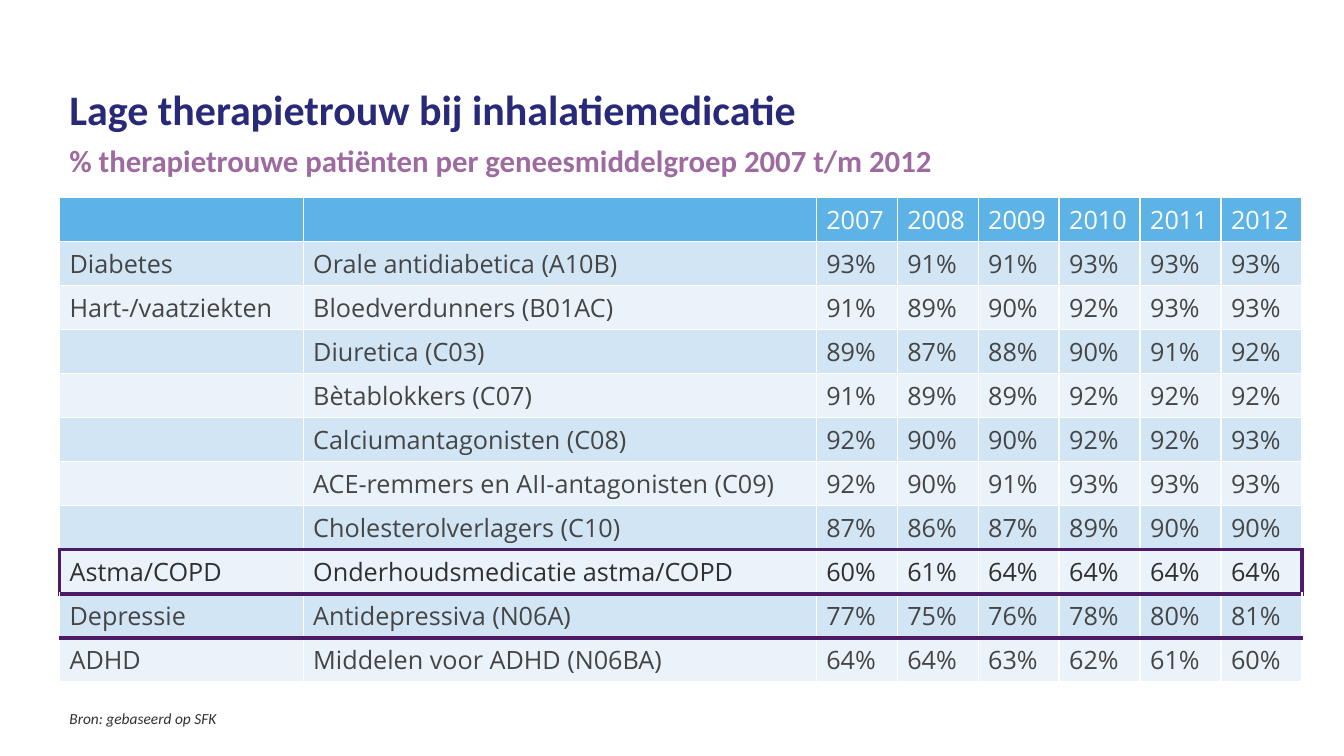
from lxml import etree
from pptx import Presentation
from pptx import util as u
from pptx.dml.color import RGBColor
from pptx.oxml.ns import qn

COLORS = {
    "title": "282979", "subtitle": "9E6BA0", "dark": "303030", "body": "454545",
    "header": "5DB3E5", "odd": "D2E5F5", "even": "EAF2FA",
    "white": "FFFFFF", "highlight": "4D1A67",
}
YEARS = [str(year) for year in range(2007, 2013)]
ADHERENCE = [
    ("Diabetes", "Orale antidiabetica (A10B)", (93, 91, 91, 93, 93, 93)),
    ("Hart-/vaatziekten", "Bloedverdunners (B01AC)", (91, 89, 90, 92, 93, 93)),
    ("", "Diuretica (C03)", (89, 87, 88, 90, 91, 92)),
    ("", "Bètablokkers (C07)", (91, 89, 89, 92, 92, 92)),
    ("", "Calciumantagonisten (C08)", (92, 90, 90, 92, 92, 93)),
    ("", "ACE-remmers en AII-antagonisten (C09)", (92, 90, 91, 93, 93, 93)),
    ("", "Cholesterolverlagers (C10)", (87, 86, 87, 89, 90, 90)),
    ("Astma/COPD", "Onderhoudsmedicatie astma/COPD", (60, 61, 64, 64, 64, 64)),
    ("Depressie", "Antidepressiva (N06A)", (77, 75, 76, 78, 80, 81)),
    ("ADHD", "Middelen voor ADHD (N06BA)", (64, 64, 63, 62, 61, 60)),
]
ASTHMA_ROW = 8
COLUMN_WIDTHS = [6.14, 12.93] + [2.04] * len(YEARS)


class SlideBuilder:
    heading_font = "Calibri"
    table_font = "Open Sans"

    def __init__(self, slide):
        self.slide = slide

    def style(self, paragraph, font_name, size, color, bold=False, italic=False):
        font = paragraph.font
        font.name, font.size = font_name, u.Pt(size)
        font.bold, font.italic = bold, italic
        font.color.rgb = RGBColor.from_string(COLORS[color])

    def text(self, left, top, width, height, lines, spacing=1.0):
        """Add a text box; each line is (wording, size, color, bold, italic)."""
        frame = self.slide.shapes.add_textbox(
            u.Cm(left), u.Cm(top), u.Cm(width), u.Cm(height)).text_frame
        frame.word_wrap = True
        for index, (wording, *look) in enumerate(lines):
            paragraph = frame.add_paragraph() if index else frame.paragraphs[0]
            paragraph.text = wording
            paragraph.line_spacing = spacing
            paragraph.space_after = u.Pt(6)
            self.style(paragraph, self.heading_font, *look)

    def border(self, cell, side, color, points):
        line = etree.SubElement(cell._tc.get_or_add_tcPr(), qn(f"a:ln{side}"),
                                w=str(u.Pt(points)))
        fill = etree.SubElement(line, qn("a:solidFill"))
        etree.SubElement(fill, qn("a:srgbClr"), val=COLORS[color])

    def cell(self, cell, wording, text_color, fill, strong_sides):
        for side in "LRTB":
            strong = side in strong_sides
            self.border(cell, side, "highlight" if strong else "white",
                        3 if strong else 1)
        cell.fill.solid()
        cell.fill.fore_color.rgb = RGBColor.from_string(COLORS[fill])
        paragraph = cell.text_frame.paragraphs[0]
        paragraph.text = wording
        self.style(paragraph, self.table_font, 18, text_color)

    def table(self, left, top, widths, row_height, rows, highlighted):
        """Add a banded table with a heavy frame around the highlighted row."""
        table = self.slide.shapes.add_table(
            len(rows), len(widths), u.Cm(left), u.Cm(top),
            u.Cm(sum(widths)), u.Cm(row_height * len(rows))).table
        for column, width in zip(table.columns, widths):
            column.width = u.Cm(width)
        strong_rows = {highlighted - 1: "B", highlighted: "TB",
                       highlighted + 1: "TB", highlighted + 2: "T"}
        strong_ends = {0: "L", len(widths) - 1: "R"}
        for r, row in enumerate(rows):
            table.rows[r].height = u.Cm(row_height)
            fill = "header" if r == 0 else "odd" if r % 2 else "even"
            color = ("white" if r == 0 else
                     "dark" if r == highlighted else "body")
            for c, wording in enumerate(row):
                sides = strong_rows.get(r, "")
                if r == highlighted:
                    sides += strong_ends.get(c, "")
                self.cell(table.cell(r, c), wording, color, fill, sides)


def main():
    deck = Presentation()
    deck.slide_width, deck.slide_height = u.Cm(33.87), u.Cm(19.05)
    builder = SlideBuilder(deck.slides.add_slide(deck.slide_layouts[6]))

    builder.text(1.5, 17.63, 30.8, 1.42, [
        ("Bron: gebaseerd op SFK", 11, "dark", False, True)], spacing=1.25)
    builder.text(1.5, 1.97, 30.8, 1.75, [
        ("Lage therapietrouw bij inhalatiemedicatie", 30, "title", True),
        ("% therapietrouwe patiënten per geneesmiddelgroep 2007 t/m 2012",
         22, "subtitle", True)])

    rows = [["", ""] + YEARS]
    rows += [[disease, medicine] + [f"{share}%" for share in shares]
             for disease, medicine, shares in ADHERENCE]
    builder.table(1.5, 4.97, COLUMN_WIDTHS, 1.11, rows, ASTHMA_ROW)
    deck.save("out.pptx")


if __name__ == "__main__":
    main()
